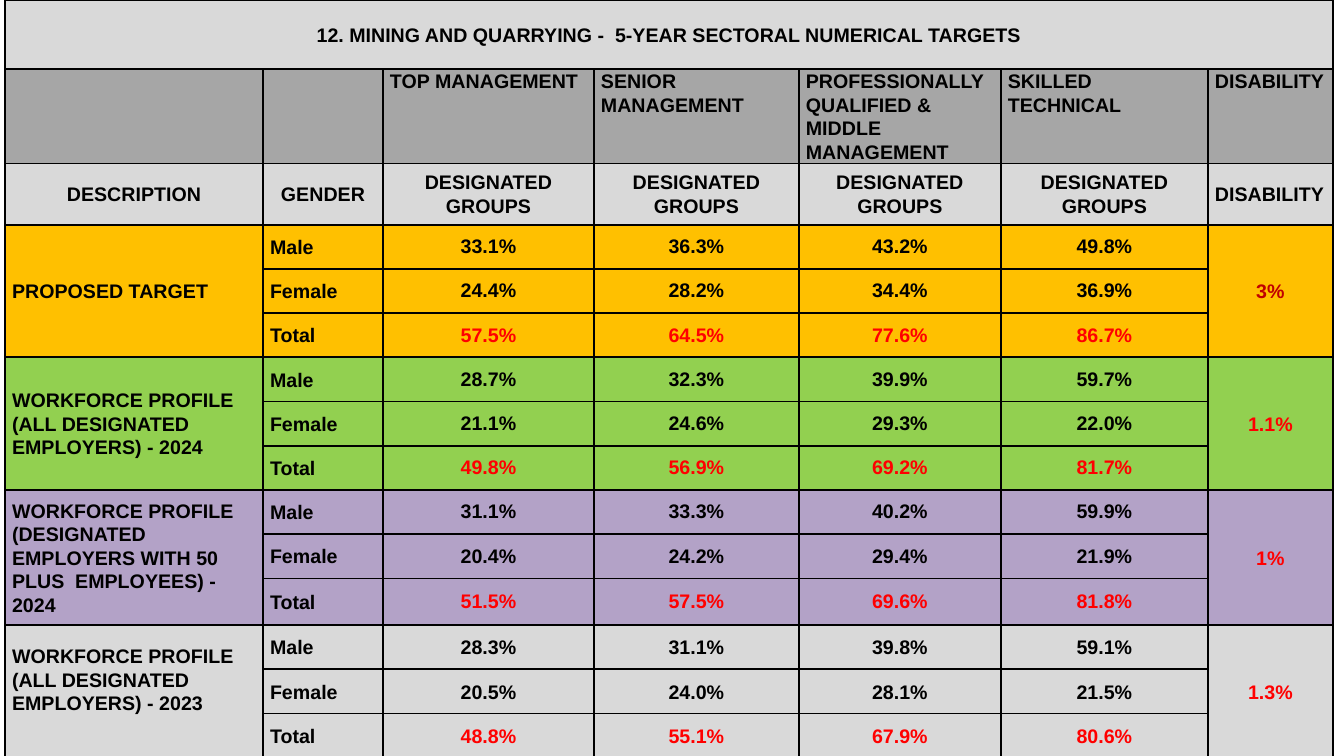
"""Build the mining and quarrying sectoral targets slide."""
from dataclasses import dataclass

from lxml import etree
from pptx import Presentation
from pptx.dml.color import RGBColor
from pptx.enum.text import MSO_ANCHOR, PP_ALIGN
from pptx.oxml.ns import qn
from pptx.table import Table, _Cell
from pptx.util import Pt

LEFT, CENTER = PP_ALIGN.LEFT, PP_ALIGN.CENTER
TOP, MIDDLE = MSO_ANCHOR.TOP, MSO_ANCHOR.MIDDLE

COLORS = {
    "black": "000000", "red": "FF0000", "dark_red": "C00000",
    "light_gray": "D9D9D9", "gray": "A6A6A6",
    "amber": "FFC000", "green": "92D050", "purple": "B3A2C7",
}
COLUMN_WIDTHS = [184.3, 85.7, 150.7, 146.4, 144.3, 147.9, 89.3]
ROW_HEIGHTS = [49.6, 64.8, 43.7] + [31.6] * 8 + [33.4] + [31.6] * 3
TITLE = "12. MINING AND QUARRYING -  5-YEAR SECTORAL NUMERICAL TARGETS"
LEVELS = ["", "", "TOP MANAGEMENT", "SENIOR MANAGEMENT",
          "PROFESSIONALLY QUALIFIED & MIDDLE MANAGEMENT",
          "SKILLED TECHNICAL", "DISABILITY"]
HEADINGS = ["DESCRIPTION", "GENDER"] + ["DESIGNATED GROUPS"] * 4 + ["DISABILITY"]
GENDERS = ["Male", "Female", "Total"]


@dataclass(frozen=True)
class CellStyle:
    """Look of a table cell."""
    fill: str
    color: str = "black"
    alignment: PP_ALIGN = LEFT
    anchor: MSO_ANCHOR = MIDDLE
    line_spacing: float = 1.07
    side_margin: float = 5
    bottom_margin: float = 0


@dataclass(frozen=True)
class TargetGroup:
    """Three gender rows sharing a description and a disability rate."""
    description: str
    fill: str
    rates: list[list[str]]
    disability: str
    disability_color: str = "red"
    line_spacing: float = 1.0
    side_margin: float = 0.7
    description_bottom: float = 0


GROUPS = [
    TargetGroup("PROPOSED TARGET", "amber",
                [["33.1%", "36.3%", "43.2%", "49.8%"],
                 ["24.4%", "28.2%", "34.4%", "36.9%"],
                 ["57.5%", "64.5%", "77.6%", "86.7%"]], "3%", "dark_red"),
    TargetGroup("WORKFORCE PROFILE (ALL DESIGNATED EMPLOYERS) - 2024", "green",
                [["28.7%", "32.3%", "39.9%", "59.7%"],
                 ["21.1%", "24.6%", "29.3%", "22.0%"],
                 ["49.8%", "56.9%", "69.2%", "81.7%"]], "1.1%"),
    TargetGroup("WORKFORCE PROFILE (DESIGNATED EMPLOYERS WITH 50 PLUS  EMPLOYEES) - 2024",
                "purple",
                [["31.1%", "33.3%", "40.2%", "59.9%"],
                 ["20.4%", "24.2%", "29.4%", "21.9%"],
                 ["51.5%", "57.5%", "69.6%", "81.8%"]], "1%"),
    TargetGroup("WORKFORCE PROFILE (ALL DESIGNATED EMPLOYERS) - 2023", "light_gray",
                [["28.3%", "31.1%", "39.8%", "59.1%"],
                 ["20.5%", "24.0%", "28.1%", "21.5%"],
                 ["48.8%", "55.1%", "67.9%", "80.6%"]], "1.3%",
                line_spacing=1.07, side_margin=5, description_bottom=17),
]


def add_borders(cell: _Cell) -> None:
    """Draw a black line on each side of a cell."""
    properties = cell._tc.get_or_add_tcPr()
    for side in ("a:lnL", "a:lnR", "a:lnT", "a:lnB"):
        line = etree.SubElement(properties, qn(side), w=str(Pt(1.5)))
        fill = etree.SubElement(line, qn("a:solidFill"))
        etree.SubElement(fill, qn("a:srgbClr"), val=COLORS["black"])


def write_cell(cell: _Cell, text: str, style: CellStyle) -> None:
    """Fill a cell with styled text."""
    cell.fill.solid()
    cell.fill.fore_color.rgb = RGBColor.from_string(COLORS[style.fill])
    cell.vertical_anchor = style.anchor
    cell.margin_left = cell.margin_right = Pt(style.side_margin)
    cell.margin_top, cell.margin_bottom = Pt(0), Pt(style.bottom_margin)
    paragraph = cell.text_frame.paragraphs[0]
    paragraph.text = text
    paragraph.alignment = style.alignment
    paragraph.line_spacing = style.line_spacing
    paragraph.font.name = "Arial"
    paragraph.font.size = Pt(14)
    paragraph.font.bold = True
    paragraph.font.color.rgb = RGBColor.from_string(COLORS[style.color])


def write_headers(table: Table) -> None:
    """Write the title row and both heading rows."""
    last = len(COLUMN_WIDTHS) - 1
    table.cell(0, 0).merge(table.cell(0, last))
    write_cell(table.cell(0, 0), TITLE, CellStyle("light_gray", alignment=CENTER))
    for column, (level, heading) in enumerate(zip(LEVELS, HEADINGS)):
        write_cell(table.cell(1, column), level, CellStyle("gray", anchor=TOP))
        alignment = LEFT if column == last else CENTER
        write_cell(table.cell(2, column), heading,
                   CellStyle("light_gray", alignment=alignment))


def write_group(table: Table, top: int, group: TargetGroup) -> None:
    """Write one group of gender rows starting at the given row."""
    last = len(COLUMN_WIDTHS) - 1
    for column in (0, last):
        table.cell(top, column).merge(table.cell(top + len(GENDERS) - 1, column))
    write_cell(table.cell(top, 0), group.description,
               CellStyle(group.fill, bottom_margin=group.description_bottom))
    write_cell(table.cell(top, last), group.disability,
               CellStyle(group.fill, group.disability_color, CENTER))
    for row, (gender, rates) in enumerate(zip(GENDERS, group.rates), start=top):
        write_cell(table.cell(row, 1), gender, CellStyle(group.fill))
        style = CellStyle(group.fill, "red" if gender == "Total" else "black", CENTER,
                          line_spacing=group.line_spacing, side_margin=group.side_margin)
        for column, rate in enumerate(rates, start=2):
            write_cell(table.cell(row, column), rate, style)


def main() -> None:
    """Create the slide and save it."""
    presentation = Presentation()
    presentation.slide_width, presentation.slide_height = Pt(960), Pt(540)
    slide = presentation.slides.add_slide(presentation.slide_layouts[6])
    table = slide.shapes.add_table(
        len(ROW_HEIGHTS), len(COLUMN_WIDTHS), Pt(3.6), Pt(0),
        Pt(sum(COLUMN_WIDTHS)), Pt(sum(ROW_HEIGHTS))).table
    table.first_row = table.horz_banding = False
    for column, width in zip(table.columns, COLUMN_WIDTHS):
        column.width = Pt(width)
    for row, height in zip(table.rows, ROW_HEIGHTS):
        row.height = Pt(height)
    for cell in table.iter_cells():
        add_borders(cell)
    write_headers(table)
    for index, group in enumerate(GROUPS):
        write_group(table, 3 + index * len(GENDERS), group)
    presentation.save("out.pptx")


if __name__ == "__main__":
    main()
